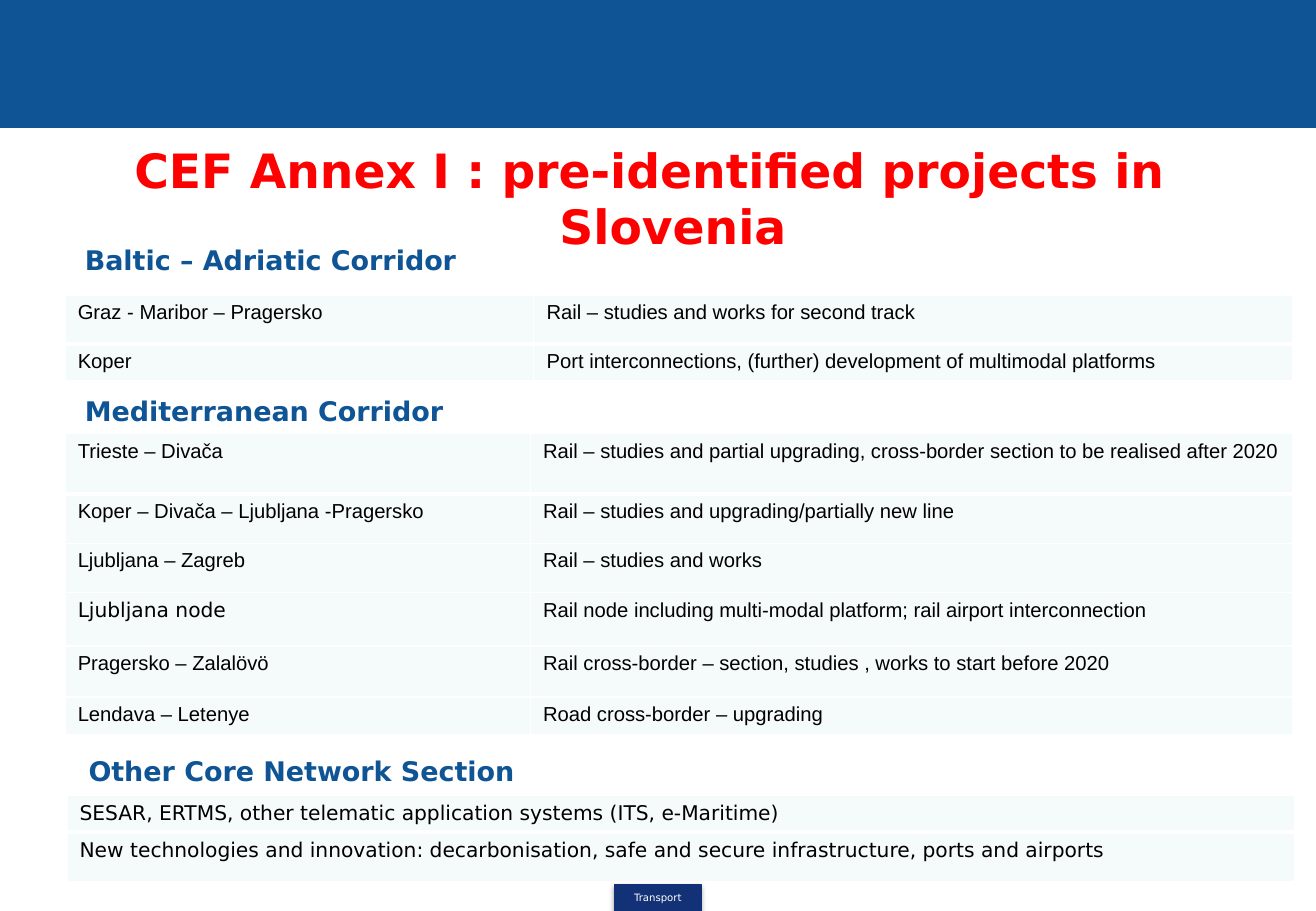
from lxml import etree
from pptx import Presentation
from pptx.dml.color import RGBColor
from pptx.enum.shapes import MSO_SHAPE
from pptx.enum.text import MSO_ANCHOR, PP_ALIGN
from pptx.oxml.ns import qn
from pptx.util import Pt

RECT = MSO_SHAPE.RECTANGLE
MIDDLE = MSO_ANCHOR.MIDDLE
CENTER = PP_ALIGN.CENTER

ARIAL = "Arial"
DEJAVU = "DejaVu Sans"
BLUE = "0F5494"
NAVY = "133176"
RED = "FF0000"
BLACK = "000000"
WHITE = "FFFFFF"
TEAL = "8AC6CD"

BALTIC_ROWS = [
    ("Graz - Maribor – Pragersko", "Rail – studies and works for second track"),
    ("Koper", "Port interconnections, (further) development of multimodal platforms"),
]
MEDITERRANEAN_ROWS = [
    ("Trieste – Divača",
     "Rail – studies and partial upgrading, cross-border section to be realised after 2020"),
    ("Koper – Divača – Ljubljana -Pragersko", "Rail – studies and upgrading/partially new line"),
    ("Ljubljana – Zagreb", "Rail – studies and works"),
    ("Ljubljana node", "Rail node including multi-modal platform; rail airport interconnection"),
    ("Pragersko – Zalalövö", "Rail cross-border – section, studies , works to start before 2020"),
    ("Lendava – Letenye", "Road cross-border – upgrading"),
]
OTHER_ROWS = [
    ("SESAR, ERTMS, other telematic application systems (ITS, e-Maritime)",),
    ("New technologies and innovation: decarbonisation, safe and secure infrastructure, "
     "ports and airports",),
]


def rgb(color):
    return RGBColor.from_string(color)


def sub(parent, tag, **attrs):
    return etree.SubElement(parent, qn(tag), {k: str(v) for k, v in attrs.items()})


def format_text(tf, font, size, color, bold=False):
    for r in tf.paragraphs[0].runs:
        r.font.name = font
        r.font.size = Pt(size)
        r.font.bold = bold
        r.font.color.rgb = rgb(color)


def add_rect(s, x, y, w, h, color):
    sp = s.shapes.add_shape(RECT, Pt(x), Pt(y), Pt(w), Pt(h))
    sp.shadow.inherit = False
    sp.fill.solid()
    sp.fill.fore_color.rgb = rgb(color)
    sp.line.color.rgb = rgb(color)
    sp.line.width = Pt(0.75)
    return sp


def add_footer_tag(s):
    sp = add_rect(s, 364.3, 524.2, 51.2, 15.8, NAVY)
    effects = sp.element.spPr.find(qn("a:effectLst"))
    shadow = sub(effects, "a:outerShdw", blurRad=Pt(3.1), dist=Pt(1.8),
                 dir=90 * 60000, rotWithShape=0)
    sub(sub(shadow, "a:srgbClr", val=BLACK), "a:alpha", val=35000)
    tf = sp.text_frame
    tf.text = "Transport"
    tf.vertical_anchor = MIDDLE
    tf.margin_left = tf.margin_right = tf.margin_top = tf.margin_bottom = 0
    tf.paragraphs[0].alignment = CENTER
    format_text(tf, DEJAVU, 6, WHITE)


def add_text(s, text, x, y, w, h, size, color, wrap=False):
    tf = s.shapes.add_textbox(Pt(x), Pt(y), Pt(w), Pt(h)).text_frame
    tf.word_wrap = wrap
    tf.text = text
    format_text(tf, DEJAVU, size, color, bold=True)
    return tf


def add_title(s, text):
    tf = add_text(s, text, 33.8, 88.6, 702, 56.9, 28, RED, wrap=True)
    tf.vertical_anchor = MIDDLE
    p = tf.paragraphs[0]
    p.alignment = CENTER
    pPr = p._p.get_or_add_pPr()
    pPr.set("marL", str(Pt(28)))
    pPr.set("indent", str(-Pt(28)))


def style_cell(cell, row):
    tcPr = cell._tc.get_or_add_tcPr()
    top = 3 if row == 1 else 1
    bottom = 3 if row == 0 else 1
    for side, width in (("L", 1), ("R", 1), ("T", top), ("B", bottom)):
        ln = sub(tcPr, f"a:ln{side}", w=Pt(width))
        sub(sub(ln, "a:solidFill"), "a:srgbClr", val=WHITE)
    cell.fill.solid()
    cell.fill.fore_color.rgb = rgb(TEAL)
    fill_color = tcPr.find(qn("a:solidFill")).find(qn("a:srgbClr"))
    sub(fill_color, "a:alpha", val=8000)


def add_project_table(s, x, y, widths, heights, rows, font):
    frame = s.shapes.add_table(len(rows), len(widths), Pt(x), Pt(y),
                               Pt(sum(widths)), Pt(sum(heights)))
    table = frame.table
    for column, width in zip(table.columns, widths):
        column.width = Pt(width)
    for i, (texts, height) in enumerate(zip(rows, heights)):
        table.rows[i].height = Pt(height)
        for j, text in enumerate(texts):
            cell = table.cell(i, j)
            cell.text = text
            cell.margin_left = cell.margin_right = Pt(7.6)
            cell.margin_top = cell.margin_bottom = Pt(3.6)
            format_text(cell.text_frame, font, 12, BLACK)
            style_cell(cell, i)
    return table


def main():
    prs = Presentation()
    prs.slide_width = Pt(780)
    prs.slide_height = Pt(540)
    s = prs.slides.add_slide(prs.slide_layouts[6])

    add_rect(s, 0, 0, 780, 75.6, BLUE)
    add_footer_tag(s)
    add_title(s, "CEF Annex I : pre-identified projects in Slovenia")

    for text, x, y, w in (
        ("Baltic – Adriatic Corridor", 43.2, 141.1, 239.8),
        ("Mediterranean Corridor", 43.2, 230.4, 227.5),
        ("Other Core Network Section", 45.4, 443.5, 268.6),
    ):
        add_text(s, text, x, y, w, 26.6, 16, BLUE)

    add_project_table(s, 38.5, 175, [277.9, 450], [29, 21.9], BALTIC_ROWS, ARIAL)
    mediterranean = add_project_table(
        s, 38.5, 257, [275.8, 452.1], [35.7, 29.4, 29.2, 31.8, 30.2, 22], MEDITERRANEAN_ROWS, ARIAL)
    format_text(mediterranean.cell(3, 0).text_frame, DEJAVU, 12, BLACK)
    add_project_table(s, 39.6, 471.6, [727.9], [21.2, 29.2], OTHER_ROWS, DEJAVU)

    prs.save("out.pptx")


if __name__ == "__main__":
    main()
